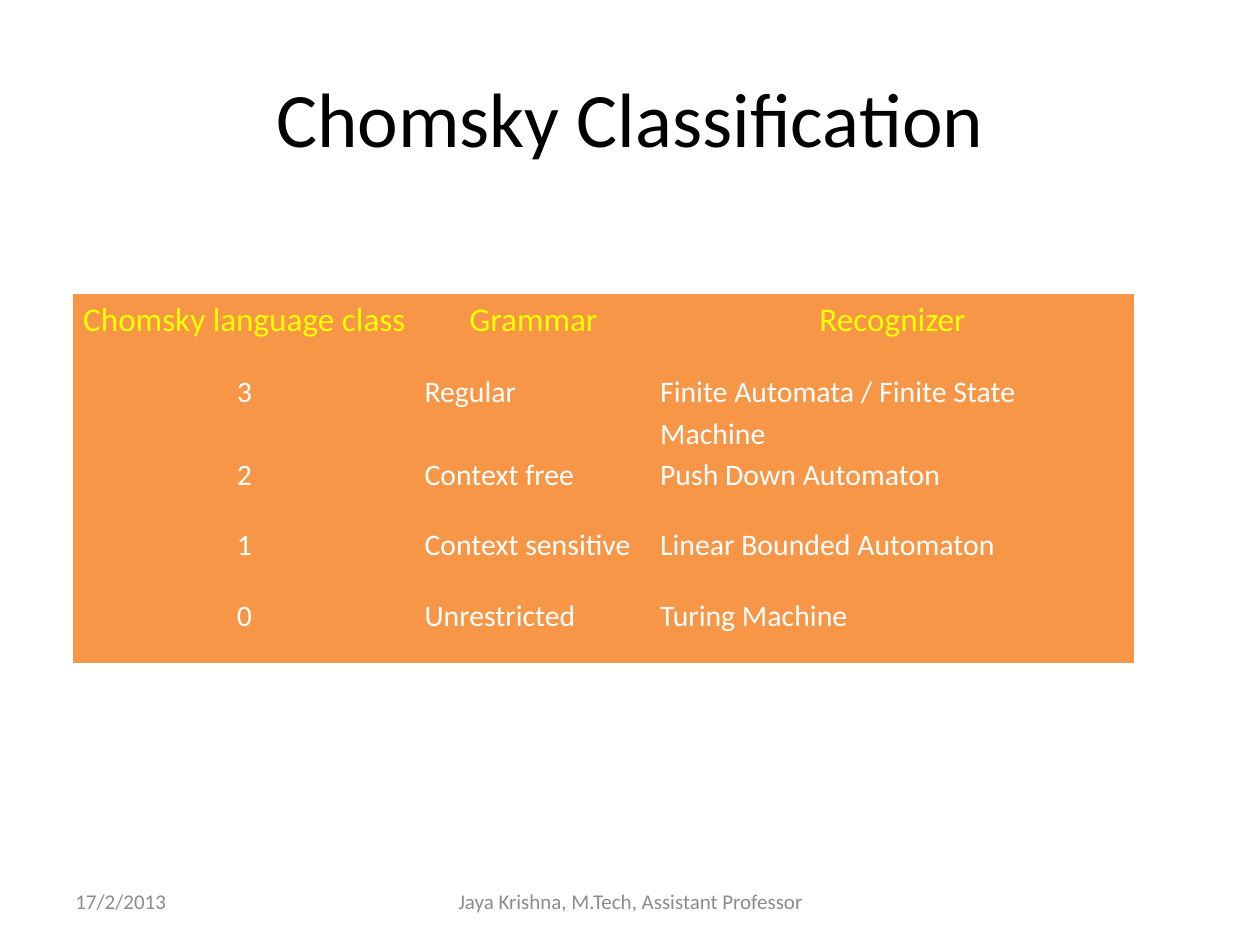
"""Build the Chomsky Classification slide with its table and footer."""
from pptx import Presentation
from pptx.dml.color import RGBColor
from pptx.enum.text import MSO_ANCHOR, PP_ALIGN
from pptx.util import Inches, Pt

TITLE = "Chomsky Classification"
FOOTERS = [
    ("17/2/2013", 0.5, 2.33, PP_ALIGN.LEFT),
    ("Jaya Krishna, M.Tech, Assistant Professor", 3.42, 3.17, PP_ALIGN.CENTER),
]
ROWS = [
    ("Chomsky language class", "Grammar", "Recognizer"),
    ("3", "Regular", "Finite Automata / Finite State Machine"),
    ("2", "Context free", "Push Down Automaton"),
    ("1", "Context sensitive", "Linear Bounded Automaton"),
    ("0", "Unrestricted", "Turing Machine"),
]
COLUMN_WIDTHS = [2.72, 1.87, 3.83]
HEADER_HEIGHT, ROW_HEIGHT = 0.6, 0.56
NO_GRID_STYLE = "{2D5ABB26-0587-4C30-8999-92F81FD0307C}"

FONT = "Calibri"
BLACK = RGBColor(0x00, 0x00, 0x00)
GRAY = RGBColor(0x8C, 0x8C, 0x8C)
ORANGE = RGBColor(0xF7, 0x96, 0x46)
YELLOW = RGBColor(0xFF, 0xFF, 0x00)
WHITE = RGBColor(0xFF, 0xFF, 0xFF)


def format_paragraph(paragraph, size, color, alignment):
    paragraph.alignment = alignment
    paragraph.font.name = FONT
    paragraph.font.size = Pt(size)
    paragraph.font.color.rgb = color


def add_title(slide):
    title = slide.shapes.title
    title.left, title.top = Inches(0.5), Inches(0.3)
    title.width, title.height = Inches(9), Inches(1.25)
    title.text_frame.text = TITLE
    title.text_frame.vertical_anchor = MSO_ANCHOR.MIDDLE
    format_paragraph(title.text_frame.paragraphs[0], 44, BLACK, PP_ALIGN.CENTER)


def add_footer(slide, text, left, width, alignment):
    box = slide.shapes.add_textbox(Inches(left), Inches(6.95), Inches(width), Inches(0.4))
    frame = box.text_frame
    frame.word_wrap = True
    frame.vertical_anchor = MSO_ANCHOR.MIDDLE
    frame.text = text
    format_paragraph(frame.paragraphs[0], 12, GRAY, alignment)


def fill_cell(cell, text, is_header, is_centered):
    cell.fill.solid()
    cell.fill.fore_color.rgb = ORANGE
    cell.margin_left = cell.margin_right = Inches(0.07)
    cell.margin_top = cell.margin_bottom = 0
    cell.text_frame.text = text
    paragraph = cell.text_frame.paragraphs[0]
    paragraph.line_spacing = 1.15
    paragraph.font.bold = False
    size, color = (19, YELLOW) if is_header else (17, WHITE)
    format_paragraph(paragraph, size, color, PP_ALIGN.CENTER if is_centered else PP_ALIGN.LEFT)


def add_classification_table(slide):
    heights = [HEADER_HEIGHT] + [ROW_HEIGHT] * (len(ROWS) - 1)
    table = slide.shapes.add_table(
        len(ROWS), len(COLUMN_WIDTHS), Inches(0.58), Inches(2.33),
        Inches(sum(COLUMN_WIDTHS)), Inches(sum(heights)),
    ).table
    table._tbl.tblPr[0].text = NO_GRID_STYLE
    table.first_row = table.horz_banding = False
    for column, width in zip(table.columns, COLUMN_WIDTHS):
        column.width = Inches(width)
    for row_index, (height, texts) in enumerate(zip(heights, ROWS)):
        table.rows[row_index].height = Inches(height)
        for column_index, text in enumerate(texts):
            is_header = row_index == 0
            is_centered = is_header or column_index == 0
            fill_cell(table.cell(row_index, column_index), text, is_header, is_centered)


def main():
    presentation = Presentation()
    presentation.slide_width, presentation.slide_height = Inches(10), Inches(7.5)
    slide = presentation.slides.add_slide(presentation.slide_layouts[5])
    add_title(slide)
    for footer in FOOTERS:
        add_footer(slide, *footer)
    add_classification_table(slide)
    presentation.save("out.pptx")


if __name__ == "__main__":
    main()
